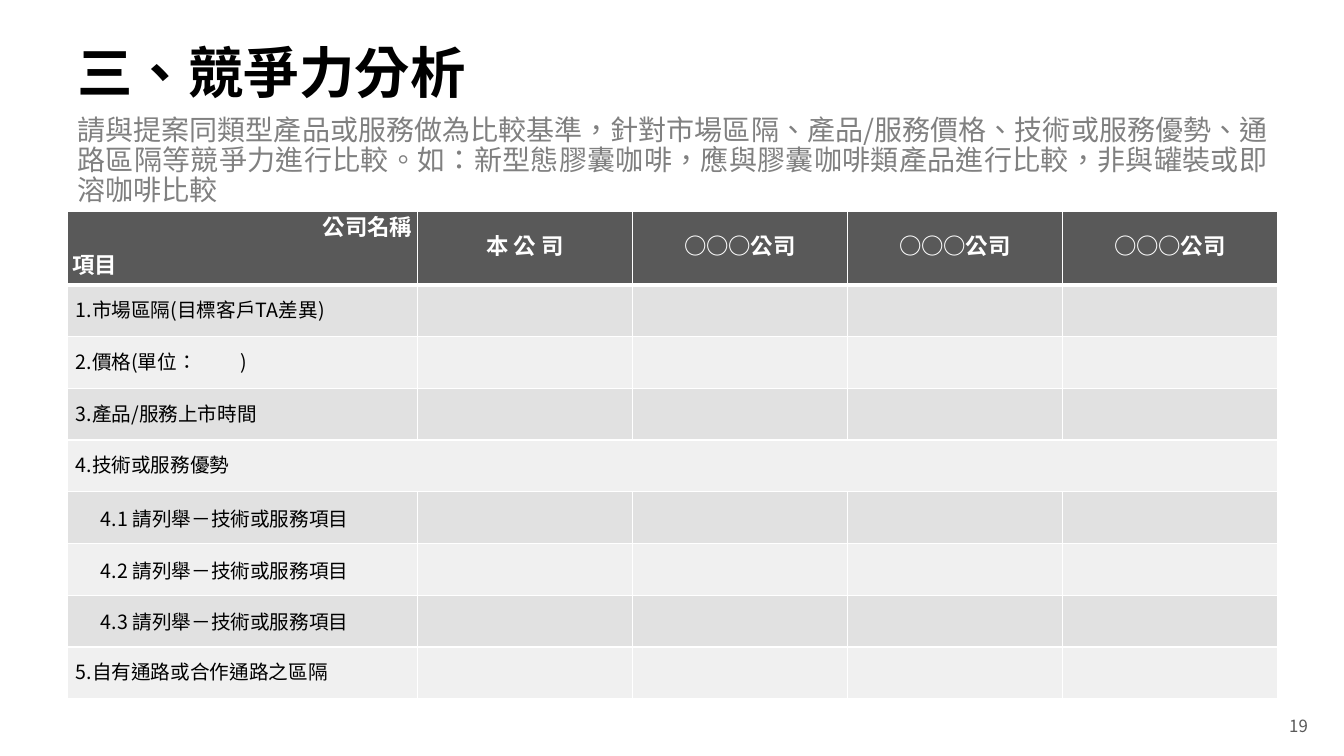
"""Build the competitiveness analysis slide with its comparison table."""
from pptx import Presentation
from pptx.dml.color import RGBColor
from pptx.enum.text import MSO_ANCHOR as Anchor, PP_ALIGN as Align
from pptx.oxml.ns import qn
from pptx.util import Inches, Pt
from lxml.etree import SubElement

FONT = "Noto Sans CJK SC"
COLORS = {"black": "000000", "white": "FFFFFF", "gray": "808080",
          "dark": "595959", "odd": "E1E1E1", "even": "F0F0F0"}
TITLE = "三、競爭力分析"
GUIDE = ("請與提案同類型產品或服務做為比較基準，針對市場區隔、產品/服務價格、技術或服務優勢、"
         "通路區隔等競爭力進行比較。如：新型態膠囊咖啡，應與膠囊咖啡類產品進行比較，"
         "非與罐裝或即溶咖啡比較")
PAGE_NUMBER = "19"
CORNER = "公司名稱\n項目"
COMPANIES = ["本 公 司"] + ["○○○公司"] * 3
SECTION = "4.技術或服務優勢"
SUBITEMS = [f"4.{number} 請列舉－技術或服務項目" for number in (1, 2, 3)]
ITEMS = ["1.市場區隔(目標客戶TA差異)", "2.價格(單位：\t)", "3.產品/服務上市時間",
         SECTION, *SUBITEMS, "5.自有通路或合作通路之區隔"]

WIDTH, HEIGHT = 13.33, 7.5
LEFT, CONTENT_WIDTH = 0.67, 12
TABLE_TOP, TABLE_HEIGHT = 2.1, 4.82
ITEM_WIDTH, HEADER_HEIGHT = 3.47, 0.71
SUBITEM_INDENT, UNIT_TAB = 0.25, 1.64
HEADER_INSETS = (0.05, 0.05, 0.05, 0.05)
ITEM_INSETS = (0.08, 0.08, 0.04, 0.08)


def style(para, size, color, bold=False, align=Align.LEFT):
    para.alignment = align
    for span in para.runs:
        span.font.name = FONT
        span.font.size = Pt(size)
        span.font.bold = bold
        span.font.color.rgb = RGBColor.from_string(COLORS[color])
        properties = span.font._element
        properties.set("lang", "zh-TW")
        SubElement(properties, qn("a:ea"), typeface=FONT)


def add_text(page, text, place, anchor, *look):
    box = page.shapes.add_textbox(*map(Inches, place))
    frame = box.text_frame
    frame.word_wrap = True
    frame.vertical_anchor = anchor
    frame.text = text
    para = frame.paragraphs[0]
    style(para, *look)
    return para


def format_cell(cell, fill, insets, bottom_width=1):
    cell.vertical_anchor = Anchor.MIDDLE
    cell.margin_left, cell.margin_top, cell.margin_right, cell.margin_bottom = map(Inches, insets)
    properties = cell._tc.get_or_add_tcPr()
    for side in "LRTB":
        width = bottom_width if side == "B" else 1
        line = SubElement(properties, qn(f"a:ln{side}"), w=str(Pt(width)))
        paint = SubElement(line, qn("a:solidFill"))
        SubElement(paint, qn("a:srgbClr"), val=COLORS["white"])
    cell.fill.solid()
    cell.fill.fore_color.rgb = RGBColor.from_string(COLORS[fill])


def write_cell(cell, text, *look):
    cell.text_frame.text = text
    for para in cell.text_frame.paragraphs:
        style(para, *look)
        if text not in SUBITEMS:
            para.line_spacing = Pt(18)
            para.space_before = Pt(9)


def add_comparison(page):
    rows, columns = len(ITEMS) + 1, len(COMPANIES) + 1
    table = page.shapes.add_table(
        rows, columns, *map(Inches, (LEFT, TABLE_TOP, CONTENT_WIDTH, TABLE_HEIGHT))).table
    for index, column in enumerate(table.columns):
        column.width = Inches((CONTENT_WIDTH - ITEM_WIDTH) / len(COMPANIES) if index else ITEM_WIDTH)
    for index, row in enumerate(table.rows):
        row.height = Inches((TABLE_HEIGHT - HEADER_HEIGHT) / len(ITEMS) if index else HEADER_HEIGHT)

    for index, heading in enumerate([CORNER, *COMPANIES]):
        cell = table.cell(0, index)
        format_cell(cell, "dark", HEADER_INSETS, 3)
        write_cell(cell, heading, 16, "white", True, Align.CENTER)
    for para, align in zip(table.cell(0, 0).text_frame.paragraphs, (Align.RIGHT, Align.LEFT)):
        para.alignment = align

    for index, item in enumerate(ITEMS, 1):
        for column in range(columns):
            format_cell(table.cell(index, column), "odd" if index % 2 else "even", ITEM_INSETS)
        cell = table.cell(index, 0)
        write_cell(cell, item, 14, "black")
        if item == SECTION:
            cell.merge(table.cell(index, columns - 1))
        if item in SUBITEMS:
            cell.margin_left = Inches(ITEM_INSETS[0] + SUBITEM_INDENT)
        if "\t" in item:
            properties = cell.text_frame.paragraphs[0]._p.get_or_add_pPr()
            stops = SubElement(properties, qn("a:tabLst"))
            SubElement(stops, qn("a:tab"), pos=str(Inches(UNIT_TAB)), algn="l")


def main():
    deck = Presentation()
    deck.slide_width, deck.slide_height = Inches(WIDTH), Inches(HEIGHT)
    page = deck.slides.add_slide(deck.slide_layouts[6])
    title = add_text(page, TITLE, (LEFT, 0.38, CONTENT_WIDTH, 0.73), Anchor.MIDDLE,
                     39.6, "black", True)
    guide = add_text(page, GUIDE, (LEFT, 1.1, CONTENT_WIDTH, 1.09), Anchor.TOP,
                     20, "gray", False, Align.JUSTIFY)
    title.line_spacing = guide.line_spacing = 0.9
    guide.space_after = Pt(6)
    add_comparison(page)
    add_text(page, PAGE_NUMBER, (10.07, 7.08, 3, 0.24), Anchor.MIDDLE,
             12, "dark", False, Align.RIGHT)
    deck.save("out.pptx")


if __name__ == "__main__":
    main()
